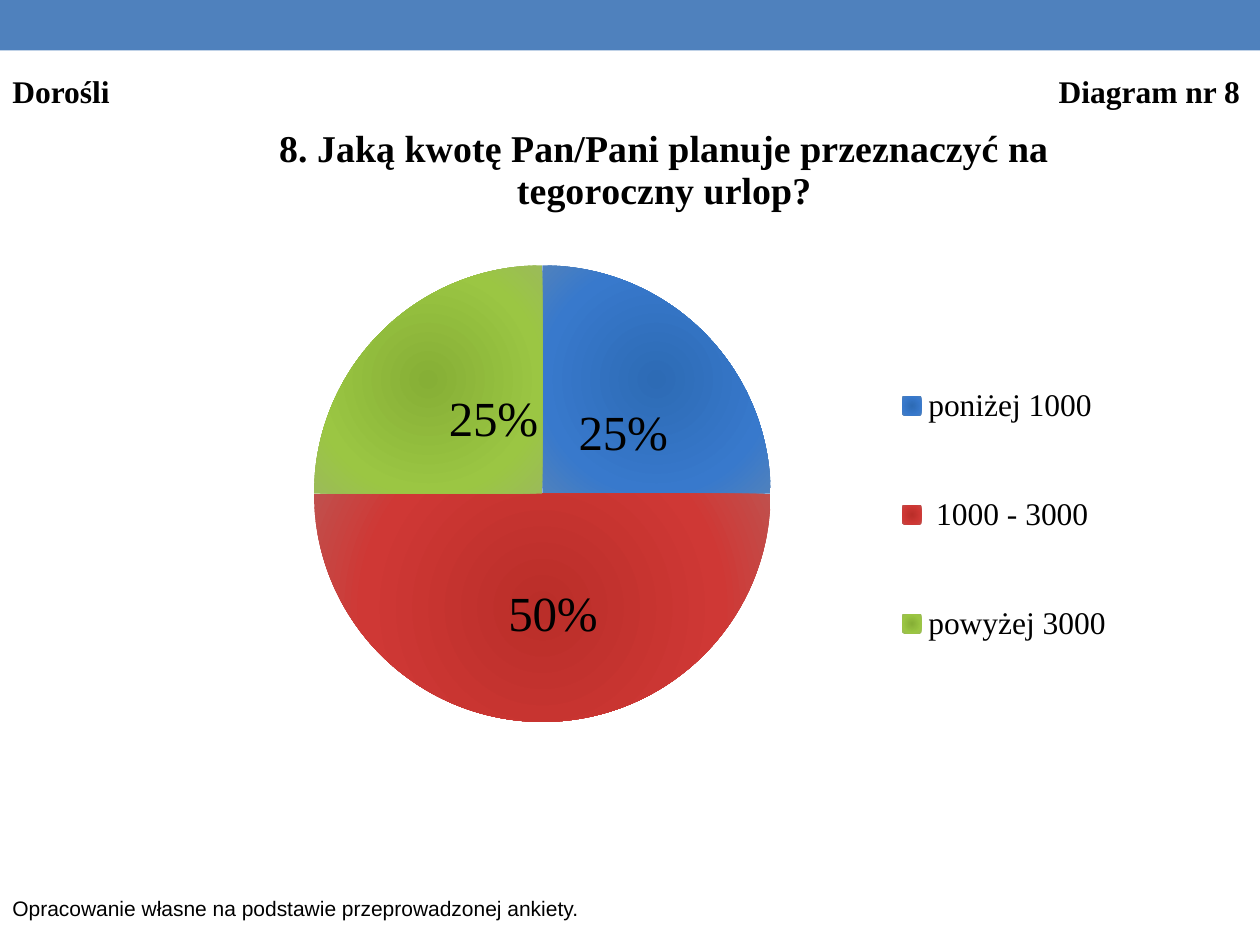
from lxml import etree
from pptx import Presentation
from pptx.chart.data import CategoryChartData
from pptx.dml.color import RGBColor
from pptx.enum.chart import XL_CHART_TYPE, XL_DATA_LABEL_POSITION, XL_LEGEND_POSITION
from pptx.enum.shapes import MSO_SHAPE
from pptx.enum.text import MSO_AUTO_SIZE
from pptx.oxml import parse_xml
from pptx.oxml.ns import nsdecls, qn
from pptx.util import Cm, Pt

PIE = XL_CHART_TYPE.PIE
CENTER = XL_DATA_LABEL_POSITION.CENTER
RIGHT = XL_LEGEND_POSITION.RIGHT
RECTANGLE = MSO_SHAPE.RECTANGLE
FIT_SHAPE = MSO_AUTO_SIZE.SHAPE_TO_FIT_TEXT

SERIF, SANS = "Times New Roman", "Arial"
BLACK, BLUE = "000000", "4F81BD"
QUESTION = "8. Jaką kwotę Pan/Pani planuje przeznaczyć na tegoroczny urlop?"
# category, value, gradient from centre to rim, label shift as share of the chart
SLICES = [
    ("poniżej 1000", 25, ("2D6BB5", "3879CC", BLUE), (0, 0.03)),
    (" 1000 - 3000", 50, ("BA2E29", "CF3835", "C0504D"), (0.01, 0.01)),
    ("powyżej 3000", 25, ("86AF36", "9BC643", "9BBB59"), (0.03, 0.01)),
]


def color(hex_value):
    return RGBColor.from_string(hex_value)


def set_font(font, name, size, bold=False):
    font.name, font.size, font.bold = name, Pt(size), bold
    font.color.rgb = color(BLACK)


def manual_layout(**settings):
    """Chart layout element; settings are given in schema order."""
    layout = etree.Element(qn("c:layout"))
    manual = etree.SubElement(layout, qn("c:manualLayout"))
    for name, value in settings.items():
        etree.SubElement(manual, qn(f"c:{name}")).set("val", str(value))
    return layout


def replace_layout(element, layout, position):
    for old in element.findall(qn("c:layout")):
        element.remove(old)
    element.insert(position, layout)


def radial_fill(point, stops):
    """Circular gradient, which only XML can describe."""
    point.format.fill.solid()
    properties = point.format.fill._xPr
    stop_xml = "".join(
        f'<a:gs pos="{position}"><a:srgbClr val="{value}"/></a:gs>'
        for position, value in zip((0, 70000, 100000), stops))
    gradient = parse_xml(
        f'<a:gradFill {nsdecls("a")} rotWithShape="1"><a:gsLst>{stop_xml}</a:gsLst>'
        '<a:path path="circle"><a:fillToRect l="50000" t="50000" r="50000" b="50000"/>'
        '</a:path></a:gradFill>')
    properties.replace(properties.find(qn("a:solidFill")), gradient)


def add_band(slide, left, top, width, height):
    band = slide.shapes.add_shape(RECTANGLE, left, top, width, height)
    band.shadow.inherit = False
    band.fill.solid()
    band.fill.fore_color.rgb = color(BLUE)
    band.line.fill.background()


def add_text(slide, left, top, width, height, text, font_name, size, bold=False, tab=None):
    box = slide.shapes.add_textbox(left, top, width, height)
    frame = box.text_frame
    frame.word_wrap = True
    frame.auto_size = FIT_SHAPE
    paragraph = frame.paragraphs[0]
    paragraph.text = text
    if tab is not None:
        properties = paragraph._p.get_or_add_pPr()
        tabs = etree.SubElement(properties, qn("a:tabLst"))
        etree.SubElement(tabs, qn("a:tab"), pos=str(int(tab)), algn="r")
    set_font(paragraph.font, font_name, size, bold)


def add_pie(slide, left, top, width, height):
    data = CategoryChartData()
    data.categories = [category for category, *_ in SLICES]
    data.add_series("Series 1", [value for _, value, *_ in SLICES])
    chart = slide.shapes.add_chart(PIE, left, top, width, height, data).chart
    set_font(chart.font, SANS, 18)

    # Title
    chart.has_title = True
    title = chart.chart_title
    title.include_in_layout = False
    title.text_frame.text = QUESTION
    set_font(title.text_frame.paragraphs[0].font, SERIF, 21.6, True)

    # Legend
    chart.has_legend = True
    legend = chart.legend
    legend.position = RIGHT
    legend.include_in_layout = False
    set_font(legend.font, SERIF, 18)
    replace_layout(legend._element, manual_layout(
        xMode="edge", yMode="edge", x=0.7, y=0.31, w=0.24, h=0.57), 1)

    # Slices and their labels
    plot = chart.plots[0]
    plot.vary_by_categories = True
    for index, (_, value, stops, (shift_x, shift_y)) in enumerate(SLICES):
        point = plot.series[0].points[index]
        radial_fill(point, stops)
        point.format.line.fill.background()
        label = point.data_label
        label.text_frame.text = f"{value}%"
        set_font(label.text_frame.paragraphs[0].font, SERIF, 28, True)
        label.position = CENTER
        label_element = label._get_or_add_dLbl()
        replace_layout(label_element, manual_layout(x=shift_x, y=shift_y), 1)

    plot_area = chart._chartSpace.chart.plotArea
    replace_layout(plot_area, manual_layout(
        layoutTarget="inner", xMode="edge", yMode="edge",
        x=0.17, y=0.24, w=0.43, h=0.65), 0)


def main():
    presentation = Presentation()
    presentation.slide_width, presentation.slide_height = Cm(25.4), Cm(19.05)
    slide = presentation.slides.add_slide(presentation.slide_layouts[6])

    # Top band
    add_band(slide, 0, 0, presentation.slide_width, Cm(1.02))
    # Chart
    add_pie(slide, Cm(2.69), Cm(1.93), Cm(21.41), Cm(14.2))
    # Heading: group on the left, diagram number at a right tab
    add_text(slide, 0, Cm(1.32), presentation.slide_width, Cm(1.02),
             "Dorośli\tDiagram nr 8", SERIF, 18, True, tab=Cm(24.75))
    # Source note
    add_text(slide, 0, Cm(17.93), Cm(13.79), Cm(0.77),
             "Opracowanie własne na podstawie przeprowadzonej ankiety.", SANS, 12)

    presentation.save("out.pptx")


if __name__ == "__main__":
    main()
